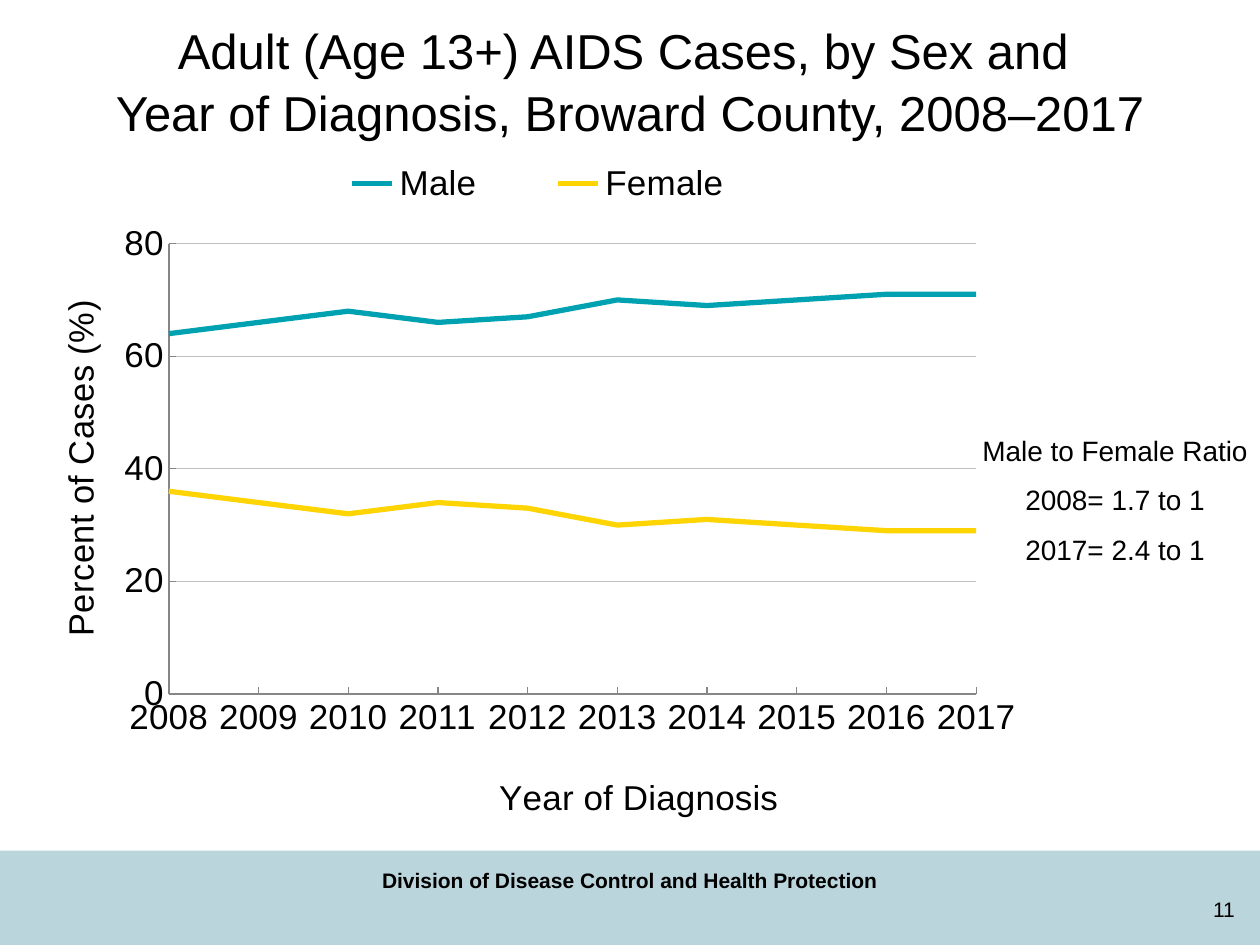
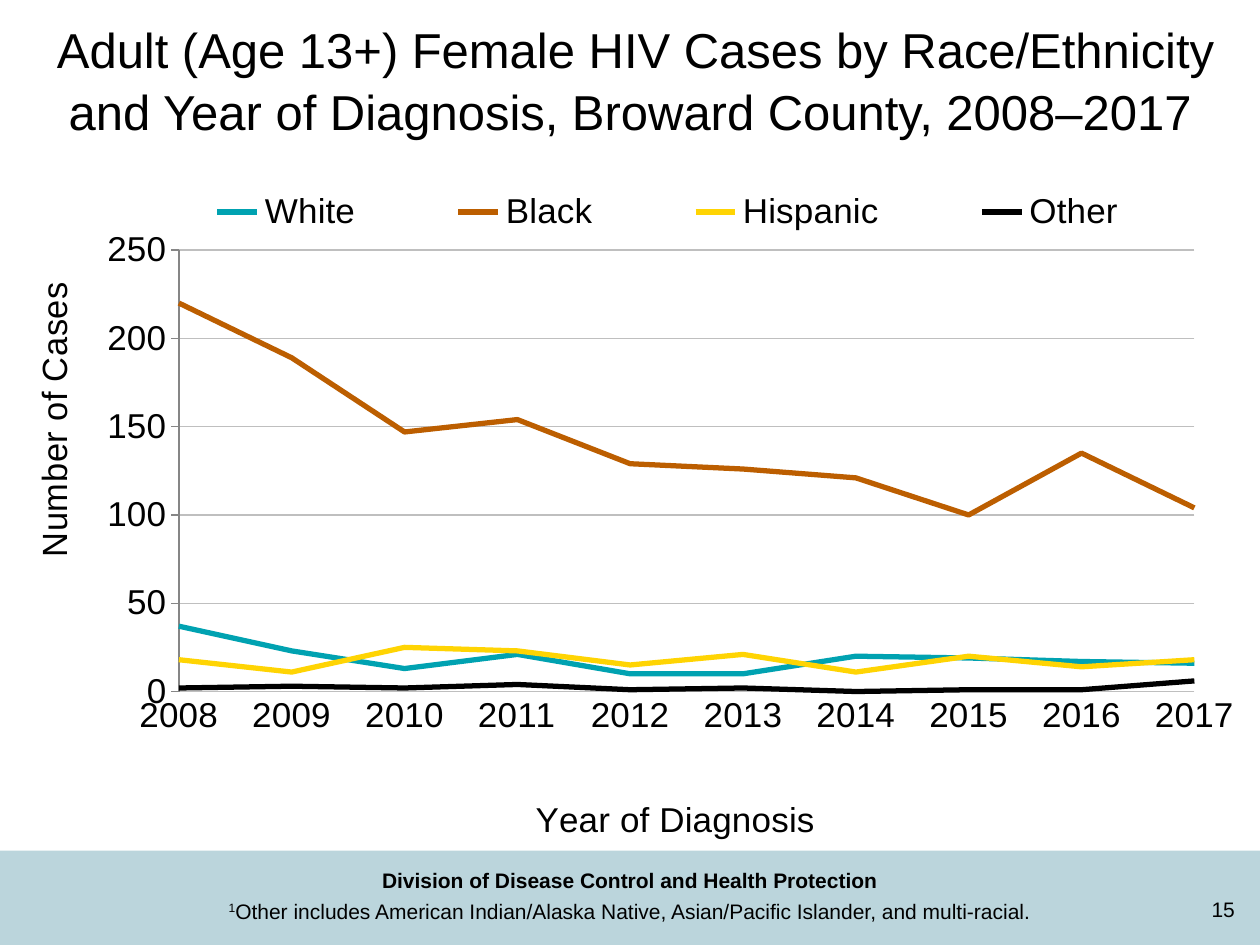
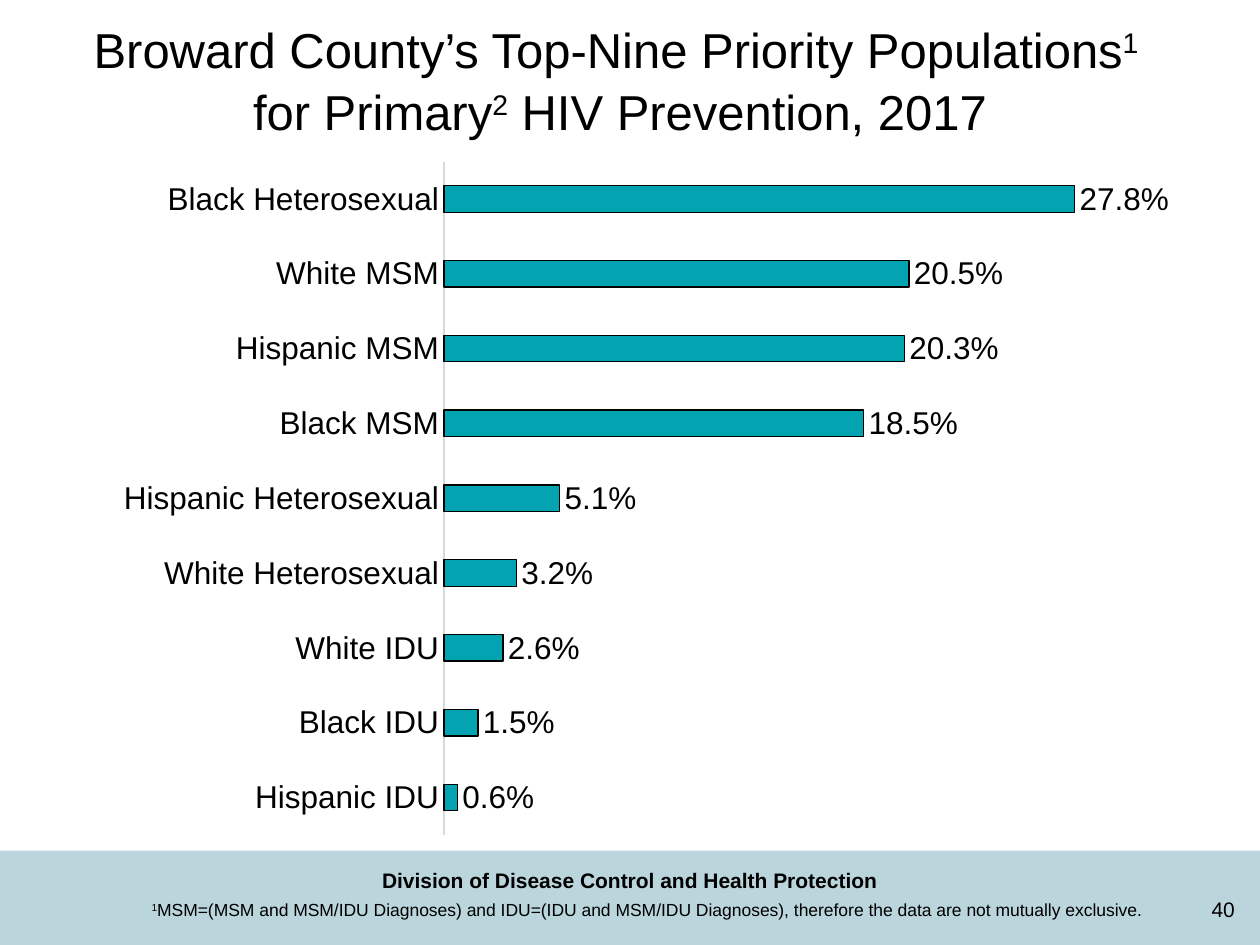
from dataclasses import dataclass

from lxml.etree import SubElement
from pptx import Presentation
from pptx.chart.data import CategoryChartData
from pptx.dml.color import RGBColor
from pptx.enum.chart import XL_CHART_TYPE as ChartType
from pptx.enum.chart import XL_LABEL_POSITION as LabelPosition
from pptx.enum.chart import XL_LEGEND_POSITION as LegendPosition
from pptx.enum.chart import XL_TICK_LABEL_POSITION as TickLabels
from pptx.enum.chart import XL_TICK_MARK as Tick
from pptx.enum.shapes import MSO_SHAPE as Preset
from pptx.enum.text import MSO_ANCHOR as Anchor
from pptx.enum.text import MSO_AUTO_SIZE as AutoSize
from pptx.enum.text import PP_ALIGN as Align
from pptx.oxml.ns import qn
from pptx.util import Inches, Pt

FONT = "Arial"
BLACK = RGBColor(0x00, 0x00, 0x00)
BAND = RGBColor(0xBB, 0xD5, 0xDC)
TEAL = RGBColor(0x00, 0xA2, 0xB1)
BAR_TEAL = RGBColor(0x03, 0xA3, 0xB2)
YELLOW = RGBColor(0xFF, 0xD4, 0x03)
BROWN = RGBColor(0xBC, 0x5E, 0x00)
GRID_GRAY = RGBColor(0xBF, 0xBF, 0xBF)
AXIS_GRAY = RGBColor(0x86, 0x86, 0x86)
PALE_GRAY = RGBColor(0xD9, 0xD9, 0xD9)

COLUMNS, ROWS = 100, 75
CELL = Inches(0.1)
YEARS = [str(year) for year in range(2008, 2018)]
AGENCY = "Division of Disease Control and Health Protection"


@dataclass
class Box:
    left: int
    top: int
    width: int
    height: int

    def inset(self, left, top, width, height):
        return Box(int(self.left + left * self.width), int(self.top + top * self.height),
                   int(width * self.width), int(height * self.height))

    def frame(self):
        return self.left, self.top, self.width, self.height


def cells(left, top, width, height):
    return Box(*(int(count * CELL) for count in (left, top, width, height)))


FOOTER = cells(0, 67.5, COLUMNS, 7.5)


def style_font(font, size, color=BLACK, bold=False):
    font.name = FONT
    font.size = Pt(size)
    font.bold = bold
    font.color.rgb = color


def write(frame, lines, size, align=Align.CENTER, anchor=Anchor.TOP, bold=False,
          spacing=None, gap=0):
    """Each line is a list of runs; a run starting with ^ is raised."""
    frame.word_wrap = True
    frame.auto_size = AutoSize.NONE
    frame.vertical_anchor = anchor
    for index, line in enumerate(lines):
        para = frame.add_paragraph() if index else frame.paragraphs[0]
        para.alignment = align
        para.space_before = Pt(gap if index else 0)
        if spacing:
            para.line_spacing = spacing
        for text in line:
            span = para.add_run()
            span.text = text.removeprefix("^")
            style_font(span.font, size, bold=bold)
            if text.startswith("^"):
                span.font._element.set("baseline", "30000")


def add_text(page, box, lines, size, **options):
    shape = page.shapes.add_textbox(*box.frame())
    write(shape.text_frame, lines, size, **options)


def add_title(page, box, lines, anchor=Anchor.MIDDLE):
    title = page.shapes.title
    title.left, title.top, title.width, title.height = box.frame()
    write(title.text_frame, lines, 28, anchor=anchor, spacing=1.05)


def add_footer(page, box, number):
    band = page.shapes.add_shape(Preset.RECTANGLE, *box.frame())
    band.shadow.inherit = False
    band.fill.solid()
    band.fill.fore_color.rgb = BAND
    band.line.fill.background()
    add_text(page, box.inset(0.76, 0.36, 0.23, 0.53), [[number]], 12,
             align=Align.RIGHT, anchor=Anchor.MIDDLE)
    add_text(page, box.inset(0.26, 0.11, 0.48, 0.4), [[AGENCY]], 12, bold=True)


def new_page(deck, number, title_box, title_lines, anchor=Anchor.MIDDLE):
    page = deck.slides.add_slide(deck.slide_layouts[5])
    add_footer(page, FOOTER, number)
    add_title(page, title_box, title_lines, anchor)
    return page


def set_layout(element, index, shares, inner=False):
    for old in element.findall(qn("c:layout")):
        element.remove(old)
    layout = SubElement(element, qn("c:layout"))
    element.insert(index, layout)
    manual = SubElement(layout, qn("c:manualLayout"))
    values = {"layoutTarget": "inner"} if inner else {}
    values.update(xMode="edge", yMode="edge")
    values.update(zip("xywh", shares))
    for name, value in values.items():
        SubElement(manual, qn(f"c:{name}")).set("val", str(value))


def new_chart(page, box, kind, names, series, plot, size):
    data = CategoryChartData()
    data.categories = names
    for name, values, _ in series:
        data.add_series(name, values)
    chart = page.shapes.add_chart(kind, *box.frame(), data).chart
    chart.has_title = False
    chart.has_legend = False
    style_font(chart.font, size)
    chart.plots[0].vary_by_categories = False
    set_layout(chart._chartSpace.chart.plotArea, 0, plot, inner=True)
    return chart


def style_line(line, color, width=0.75):
    line.color.rgb = color
    line.width = Pt(width)


def name_axis(axis, text, place, turned=False):
    title = axis.axis_title
    span = title.text_frame.paragraphs[0].add_run()
    span.text = text
    style_font(span.font, 20)
    if turned:
        body = title.text_frame._txBody.bodyPr
        body.set("rot", "-5400000")
        body.set("vert", "horz")
    set_layout(title._element, 1, place)


def start_lines_on_axis(scale):
    element = scale._element
    crossing = element.find(qn("c:crossBetween"))
    if crossing is None:
        crossing = SubElement(element, qn("c:crossBetween"))
        element.find(qn("c:crosses")).addnext(crossing)
    crossing.set("val", "midCat")


def add_trend(page, box, series, measure, top, step, plot, legend, x_title, y_title):
    chart = new_chart(page, box, ChartType.LINE, YEARS, series, plot, 20)
    for line, (_, _, color) in zip(chart.plots[0].series, series):
        line.smooth = False
        style_line(line.format.line, color, 3)

    chart.has_legend = True
    chart.legend.position = LegendPosition.TOP
    chart.legend.include_in_layout = False
    style_font(chart.legend.font, 20)
    set_layout(chart.legend._element, 1, legend)

    years, scale = chart.category_axis, chart.value_axis
    name_axis(years, "Year of Diagnosis", x_title)
    name_axis(scale, measure, y_title, turned=True)
    scale.minimum_scale, scale.maximum_scale, scale.major_unit = 0, top, step
    style_line(scale.major_gridlines.format.line, GRID_GRAY)
    start_lines_on_axis(scale)
    for axis in (years, scale):
        axis.major_tick_mark = Tick.INSIDE
        axis.minor_tick_mark = Tick.NONE
        style_line(axis.format.line, AXIS_GRAY)
    return chart


def add_ranking(page, box, groups):
    names, values = zip(*reversed(groups))
    series = [("Series 1", values, BAR_TEAL)]
    chart = new_chart(page, box, ChartType.BAR_CLUSTERED, names, series,
                      (0.333, 0.027, 0.595, 0.946), 10)
    plot = chart.plots[0]
    plot.gap_width = 182
    bars = plot.series[0]
    bars.format.fill.solid()
    bars.format.fill.fore_color.rgb = BAR_TEAL
    style_line(bars.format.line, BLACK)

    labels = bars.data_labels
    labels.show_value = True
    labels.position = LabelPosition.OUTSIDE_END
    labels.number_format = "0.0%"
    labels.number_format_is_linked = False
    style_font(labels.font, 18)

    for axis in (chart.category_axis, chart.value_axis):
        axis.major_tick_mark = axis.minor_tick_mark = Tick.NONE
        axis.has_major_gridlines = False
    style_font(chart.category_axis.tick_labels.font, 18)
    style_line(chart.category_axis.format.line, PALE_GRAY)
    scale = chart.value_axis
    scale.minimum_scale, scale.maximum_scale = 0, 0.3
    scale.tick_label_position = TickLabels.NONE
    scale.format.line.fill.background()


def build_sex_page(deck):
    page = new_page(deck, "11", cells(0, 1.8, COLUMNS, 9), [
        ["Adult (Age 13+) AIDS Cases, by Sex and "],
        ["Year of Diagnosis, Broward County, 2008–2017"]])
    series = [("Male", (64, 66, 68, 66, 67, 70, 69, 70, 71, 71), TEAL),
              ("Female", (36, 34, 32, 34, 33, 30, 31, 30, 29, 29), YELLOW)]
    add_trend(page, cells(1.7, 10.8, 79.6, 55), series, "Percent of Cases (%)", 80, 20,
              plot=(0.147, 0.158, 0.805, 0.661), legend=(0.26, 0.03, 0.51, 0.08),
              x_title=(0.47, 0.93), y_title=(0.03, 0.24))
    add_text(page, cells(75, 33.9, 27, 11.8), [
        ["Male to Female Ratio"], ["2008= 1.7 to 1"], ["2017= 2.4 to 1"]], 16, gap=9)


def build_race_page(deck):
    page = new_page(deck, "15", cells(0, 0, COLUMNS, 12.5), [
        [" Adult (Age 13+) Female HIV Cases by Race/Ethnicity "
         "and Year of Diagnosis, Broward County, 2008–2017"]])
    series = [("White", (37, 23, 13, 21, 10, 10, 20, 19, 17, 16), TEAL),
              ("Black", (220, 189, 147, 154, 129, 126, 121, 100, 135, 104), BROWN),
              ("Hispanic", (18, 11, 25, 23, 15, 21, 11, 20, 14, 18), YELLOW),
              ("Other", (2, 3, 2, 4, 1, 2, 0, 1, 1, 6), BLACK)]
    chart = add_trend(page, cells(0, 12.5, COLUMNS, 55), series, "Number of Cases", 250, 50,
                      plot=(0.142, 0.136, 0.806, 0.648), legend=(0.1, 0.04, 0.86, 0.08),
                      x_title=(0.42, 0.93), y_title=(0.02, 0.18))
    chart.category_axis.format.line.fill.background()
    chart.value_axis.major_tick_mark = Tick.OUTSIDE
    add_text(page, FOOTER.inset(0, 0.44, 1, 0.41), [
        ["^1", "Other includes American Indian/Alaska Native, Asian/Pacific Islander, "
               "and multi-racial."]], 12)


def build_priority_page(deck):
    page = new_page(deck, "40", cells(-0.8, 0.8, COLUMNS, 10.5), [
        ["Broward County’s Top-Nine Priority Populations", "^1 "],
        ["for Primary", "^2", " HIV Prevention, 2017"]], anchor=Anchor.TOP)
    add_ranking(page, cells(5, 11.3, 90.8, 56.5), [
        ("Black Heterosexual", 0.278), ("White MSM", 0.205), ("Hispanic MSM", 0.203),
        ("Black MSM", 0.185), ("Hispanic Heterosexual", 0.051),
        ("White Heterosexual", 0.032), ("White IDU", 0.026), ("Black IDU", 0.015),
        ("Hispanic IDU", 0.006)])
    add_text(page, FOOTER.inset(0.07, 0.48, 0.89, 0.32), [
        ["^1", "MSM=(MSM and MSM/IDU Diagnoses) and IDU=(IDU and MSM/IDU Diagnoses), "
               "therefore the data are not mutually exclusive. "]], 10, spacing=0.85)


def main():
    deck = Presentation()
    deck.slide_width, deck.slide_height = COLUMNS * CELL, ROWS * CELL
    build_sex_page(deck)
    build_race_page(deck)
    build_priority_page(deck)
    deck.save("out.pptx")


if __name__ == "__main__":
    main()
